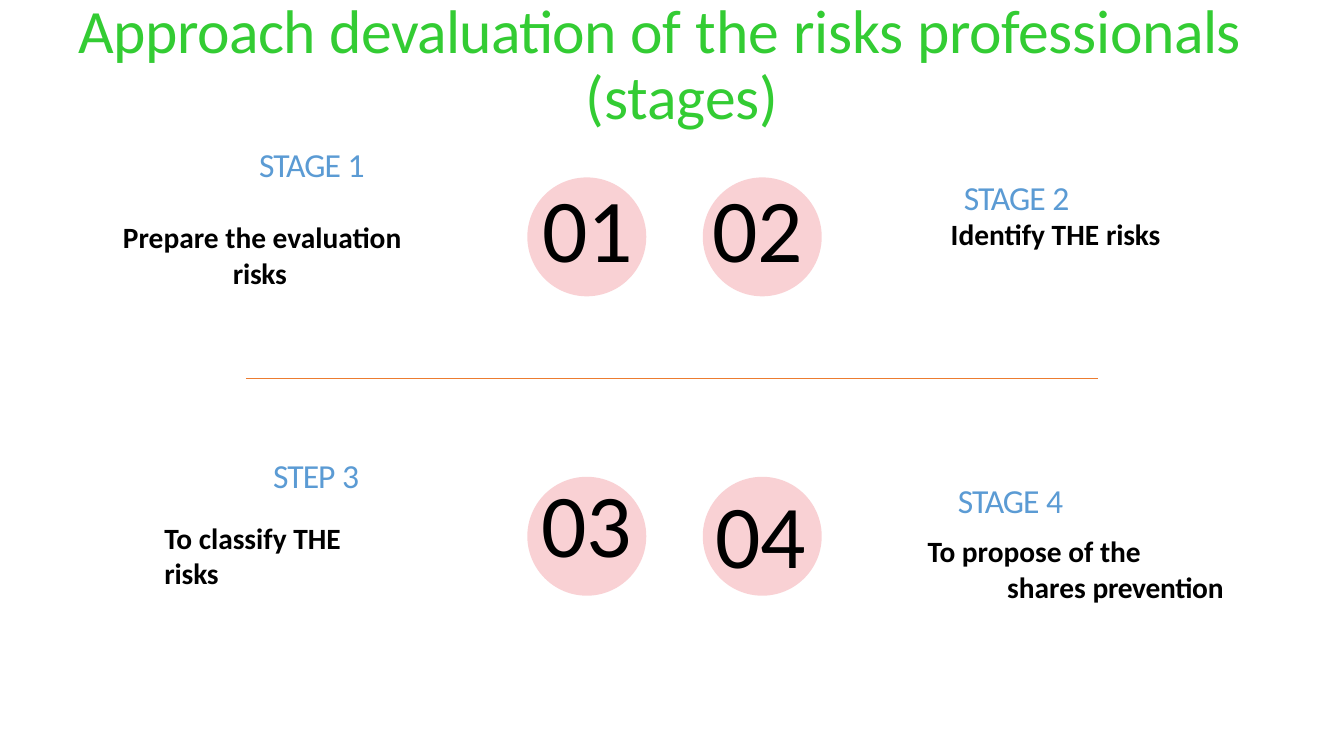
from lxml import etree
from pptx import Presentation
from pptx import util as u
from pptx.dml.color import RGBColor
from pptx.enum import shapes, text
from pptx.oxml.ns import qn

GREEN = RGBColor(0x33, 0xCC, 0x33)
BLUE = RGBColor(0x5B, 0x9B, 0xD4)
BLACK = RGBColor(0, 0, 0)
RED = RGBColor(0xE8, 0x50, 0x5B)
ORANGE = RGBColor(0xEC, 0x7C, 0x30)


class StageSlide:
    """Holds the slide and the shared text style."""

    font_name = "Calibri"
    # Each style: size, colour, bold
    styles = {
        "title": (44, GREEN, False),
        "stage": (24, BLUE, False),
        "action": (21, BLACK, True),
        "number": (64, BLACK, False),
    }

    def __init__(self, presentation):
        self.slide = presentation.slides.add_slide(presentation.slide_layouts[6])

    def circle(self, left, top, diameter):
        shape = self.slide.shapes.add_shape(
            shapes.MSO_SHAPE.OVAL, u.Inches(left), u.Inches(top),
            u.Inches(diameter), u.Inches(diameter))
        shape.shadow.inherit = False
        shape.line.fill.background()
        shape.fill.solid()
        shape.fill.fore_color.rgb = RED
        colour = shape._element.spPr.find(qn("a:solidFill"))[0]
        etree.SubElement(colour, qn("a:alpha")).set("val", "26000")

    def divider(self, left, right, top):
        line = self.slide.shapes.add_connector(
            shapes.MSO_CONNECTOR.STRAIGHT, u.Inches(left), u.Inches(top),
            u.Inches(right), u.Inches(top))
        line.line.color.rgb = ORANGE
        line.line.width = u.Pt(0.72)
        etree.SubElement(line._element.spPr, qn("a:effectLst"))

    def text_box(self, left, top, width, height, inset=0.02):
        shape = self.slide.shapes.add_textbox(
            u.Inches(left), u.Inches(top), u.Inches(width), u.Inches(height))
        frame = shape.text_frame
        frame.margin_left = frame.margin_right = frame.margin_bottom = 0
        frame.margin_top = u.Inches(inset)
        frame.word_wrap = True
        frame.auto_size = text.MSO_AUTO_SIZE.SHAPE_TO_FIT_TEXT
        return frame

    def paragraph(self, frame, style, runs, margin=0.01, indent=0,
                  spacing=None, before=None):
        """Write runs, given as (words, letter spacing in points)."""
        paragraph = frame.paragraphs[0]
        if paragraph.runs:
            paragraph = frame.add_paragraph()
        properties = paragraph._p.get_or_add_pPr()
        properties.set("marL", str(u.Inches(margin)))
        properties.set("indent", str(u.Inches(indent)))
        paragraph.alignment = text.PP_ALIGN.LEFT
        if spacing is not None:
            paragraph.line_spacing = spacing
        if before is not None:
            paragraph.space_before = u.Pt(before)
        size, colour, bold = self.styles[style]
        for words, letter_spacing in runs:
            run = paragraph.add_run()
            run.text = words
            run.font.name = self.font_name
            run.font.size = u.Pt(size)
            run.font.bold = bold
            run.font.color.rgb = colour
            run._r.get_or_add_rPr().set("spc", str(round(letter_spacing * 100)))


def main():
    presentation = Presentation()
    presentation.slide_width = u.Inches(13.33)
    presentation.slide_height = u.Inches(7.5)
    page = StageSlide(presentation)

    # Circles
    for top in (1.76, 4.73):
        for left in (5.23, 6.97):
            page.circle(left, top, 1.18)

    # Numbers
    for number, left, top in (("01", 5.37, 1.69), ("02", 7.06, 1.69),
                              ("03", 5.36, 4.62), ("04", 7.09, 4.73)):
        frame = page.text_box(left, top, 0.93, 1.09)
        page.paragraph(frame, "number", [(number, -0.2)])

    # Title and the upper stage labels
    frame = page.text_box(0.77, -0.21, 12.05, 2.27, inset=0.2)
    page.paragraph(frame, "title", [
        ("Approach ", -0.4), ("devaluation ", -0.5), ("of the ", 0),
        ("risks ", -0.1), ("professionals ", -0.3), ("(stages)", -0.1),
    ], margin=5.04, indent=-5.03, spacing=u.Pt(47.5))
    for number, margin, before in (("1", 1.8, 14.7), ("2", 8.79, 0)):
        page.paragraph(frame, "stage", [("STAGE ", -0.7), (number, -0.6)],
                       margin=margin, spacing=u.Pt(22.9), before=before)

    # Stage 1
    frame = page.text_box(1.21, 2.15, 3.09, 0.74)
    page.paragraph(frame, "action",
                   [("Prepare the evaluation ", 0), ("risks", -0.2)],
                   margin=1.1, indent=-1.09, spacing=1.02)

    # Stage 2
    frame = page.text_box(9.42, 2.1, 2.53, 0.38, inset=0.04)
    page.paragraph(frame, "action", [("Identify THE ", 0), ("risks", -0.1)])

    # Step 3
    frame = page.text_box(2.7, 4.49, 1.07, 0.43)
    page.paragraph(frame, "stage", [("STEP ", -0.7), ("3", -0.5)])
    frame = page.text_box(1.62, 5.12, 2.25, 0.38, inset=0.04)
    page.paragraph(frame, "action", [("To classify THE ", 0), ("risks", -0.1)])

    # Stage 4
    frame = page.text_box(9.18, 4.46, 2.96, 1.41, inset=0.3)
    page.paragraph(frame, "stage", [("STAGE ", -0.7), ("4", -0.6)], margin=0.32)
    page.paragraph(frame, "action",
                   [("To propose of the shares ", 0), ("prevention", -0.2)],
                   margin=0.81, indent=-0.79, spacing=1.02, before=8.9)

    # Line between the two rows
    page.divider(2.44, 10.89, 3.75)

    presentation.save("out.pptx")


if __name__ == "__main__":
    main()
